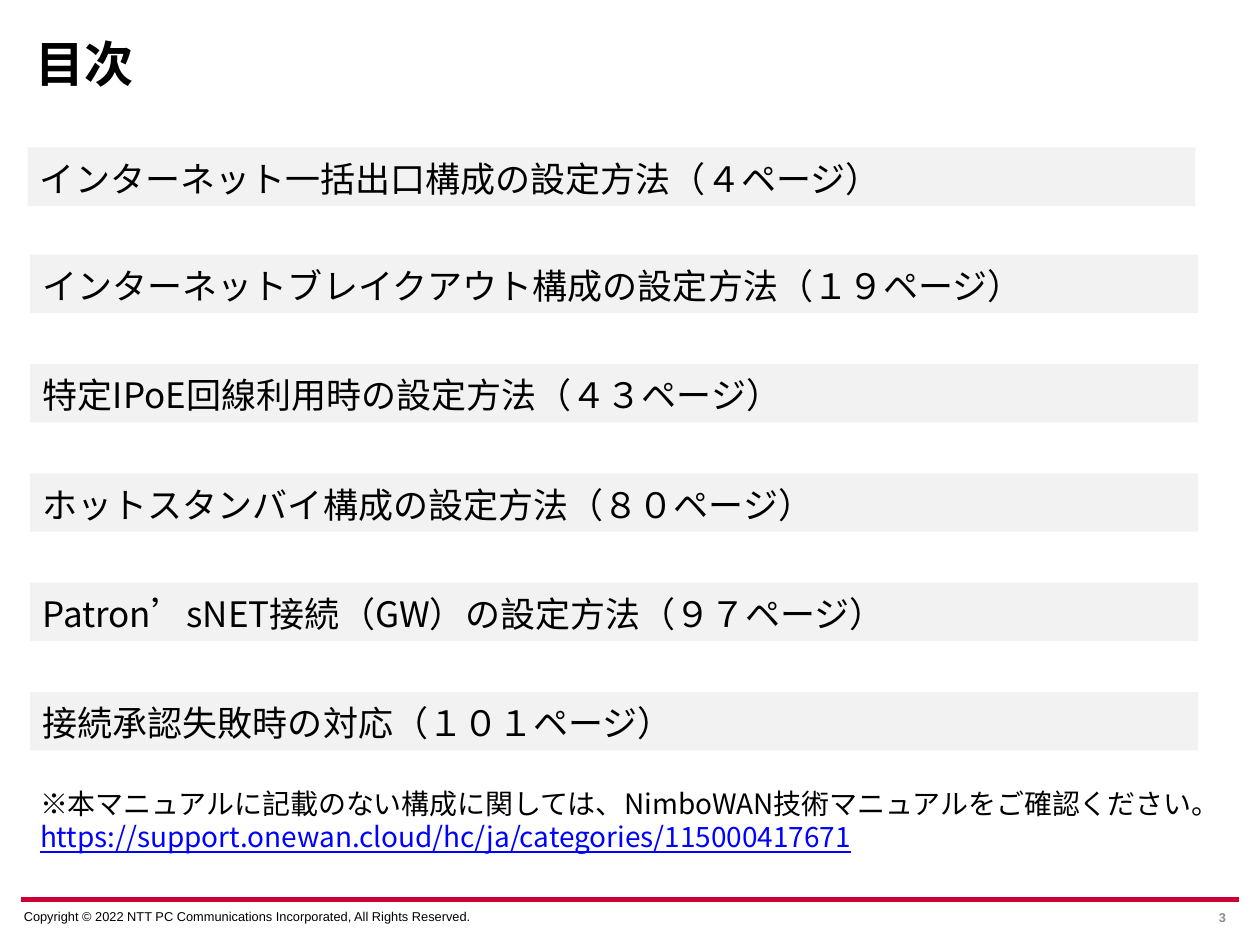
from lxml.etree import SubElement
from pptx import Presentation
from pptx.dml.color import RGBColor
from pptx.enum.shapes import MSO_CONNECTOR, MSO_SHAPE
from pptx.enum.text import MSO_ANCHOR, MSO_AUTO_SIZE, PP_ALIGN
from pptx.oxml.ns import qn
from pptx.util import Pt

BLACK = RGBColor(0x00, 0x00, 0x00)
GRAY = RGBColor(0x8C, 0x8C, 0x8C)
PALE = RGBColor(0xF2, 0xF2, 0xF2)
RED = RGBColor(0xCC, 0x00, 0x33)
BLUE = RGBColor(0x00, 0x00, 0xFF)
JAPANESE = "Noto Sans CJK JP"

CHAPTERS = [
    "インターネット一括出口構成の設定方法（４ページ）",
    "インターネットブレイクアウト構成の設定方法（１９ページ）",
    "特定IPoE回線利用時の設定方法（４３ページ）",
    "ホットスタンバイ構成の設定方法（８０ページ）",
    "Patron’sNET接続（GW）の設定方法（９７ページ）",
    "接続承認失敗時の対応（１０１ページ）",
]
NOTE = "※本マニュアルに記載のない構成に関しては、NimboWAN技術マニュアルをご確認ください。"
MANUAL_URL = "https://support.onewan.cloud/hc/ja/categories/115000417671"
COPYRIGHT = "Copyright © 2022 NTT PC Communications Incorporated, All Rights Reserved."


def format_runs(paragraph, size, color=BLACK, font=JAPANESE, bold=False, underline=False):
    for run in paragraph.runs:
        run.font.size = Pt(size)
        run.font.bold = bold
        run.font.underline = underline
        run.font.color.rgb = color
        run.font.name = font
        SubElement(run.font._element, qn("a:ea")).set("typeface", font)


def set_margins(frame, horizontal, vertical):
    frame.margin_left = frame.margin_right = Pt(horizontal)
    frame.margin_top = frame.margin_bottom = Pt(vertical)


def add_text(slide, left, top, width, height, text):
    box = slide.shapes.add_textbox(Pt(left), Pt(top), Pt(width), Pt(height))
    frame = box.text_frame
    frame.word_wrap = True
    frame.text = text
    return frame


def place_title(slide, left, top, width, height):
    title = slide.shapes.title
    title.left, title.top, title.width, title.height = map(Pt, (left, top, width, height))
    frame = title.text_frame
    frame.text = "目次"
    frame.word_wrap = False
    frame.auto_size = MSO_AUTO_SIZE.NONE
    frame.vertical_anchor = MSO_ANCHOR.TOP
    set_margins(frame, 2.9, 2.9)
    heading = frame.paragraphs[0]
    heading.alignment = PP_ALIGN.LEFT
    heading.line_spacing = 0.9
    format_runs(heading, 28, bold=True)


def add_chapter(slide, left, top, width, height, text):
    bar = slide.shapes.add_shape(
        MSO_SHAPE.RECTANGLE, Pt(left), Pt(top), Pt(width), Pt(height))
    bar.shadow.inherit = False
    bar.fill.solid()
    bar.fill.fore_color.rgb = PALE
    bar.line.fill.background()
    label = add_text(slide, left, top + 2, width + 20, 31.5, text)
    format_runs(label.paragraphs[0], 20)


def add_contents(slide, left, top, width):
    """Evenly spaced chapters; the first sits slightly up and to the left."""
    pitch = 62.5
    for index, chapter in enumerate(CHAPTERS):
        shift_x, shift_y = (-1.5, 1.25) if index == 0 else (0, 0)
        add_chapter(slide, left + shift_x, top + index * pitch + shift_y,
                    width, 33.4, chapter)


def add_note(slide, left, top, width, height):
    frame = add_text(slide, left, top, width, height, NOTE)
    format_runs(frame.paragraphs[0], 16)
    address = frame.add_paragraph()
    address.text = MANUAL_URL
    format_runs(address, 16, BLUE, underline=True)


def add_footer(slide, left, top, width):
    rule = slide.shapes.add_connector(
        MSO_CONNECTOR.STRAIGHT, Pt(left), Pt(top), Pt(left + width), Pt(top))
    rule.line.color.rgb = RED
    rule.line.width = Pt(3)
    SubElement(rule._element.spPr, qn("a:effectLst"))

    notice = add_text(slide, left + 0.7, top + 5, 407, 8.6, COPYRIGHT)
    set_margins(notice, 0, 0)
    notice.margin_left = Pt(0.7)
    format_runs(notice.paragraphs[0], 7.3, font="Arial")

    page = add_text(slide, left + width - 165.6, top - 0.7, 162, 22.3, "3")
    set_margins(page, 3.6, 0)
    page.vertical_anchor = MSO_ANCHOR.MIDDLE
    page.paragraphs[0].alignment = PP_ALIGN.RIGHT
    format_runs(page.paragraphs[0], 7.3, GRAY, "Arial", bold=True)


def main():
    deck = Presentation()
    deck.slide_width, deck.slide_height = Pt(720), Pt(540)
    slide = deck.slides.add_slide(deck.slide_layouts[5])
    add_footer(slide, 12.2, 514, 695.6)
    place_title(slide, 17.3, 20.2, 613.4, 33.1)
    add_contents(slide, 17.3, 83, 667.4)
    add_note(slide, 15.8, 445.7, 687.6, 46)
    deck.save("out.pptx")


if __name__ == "__main__":
    main()
